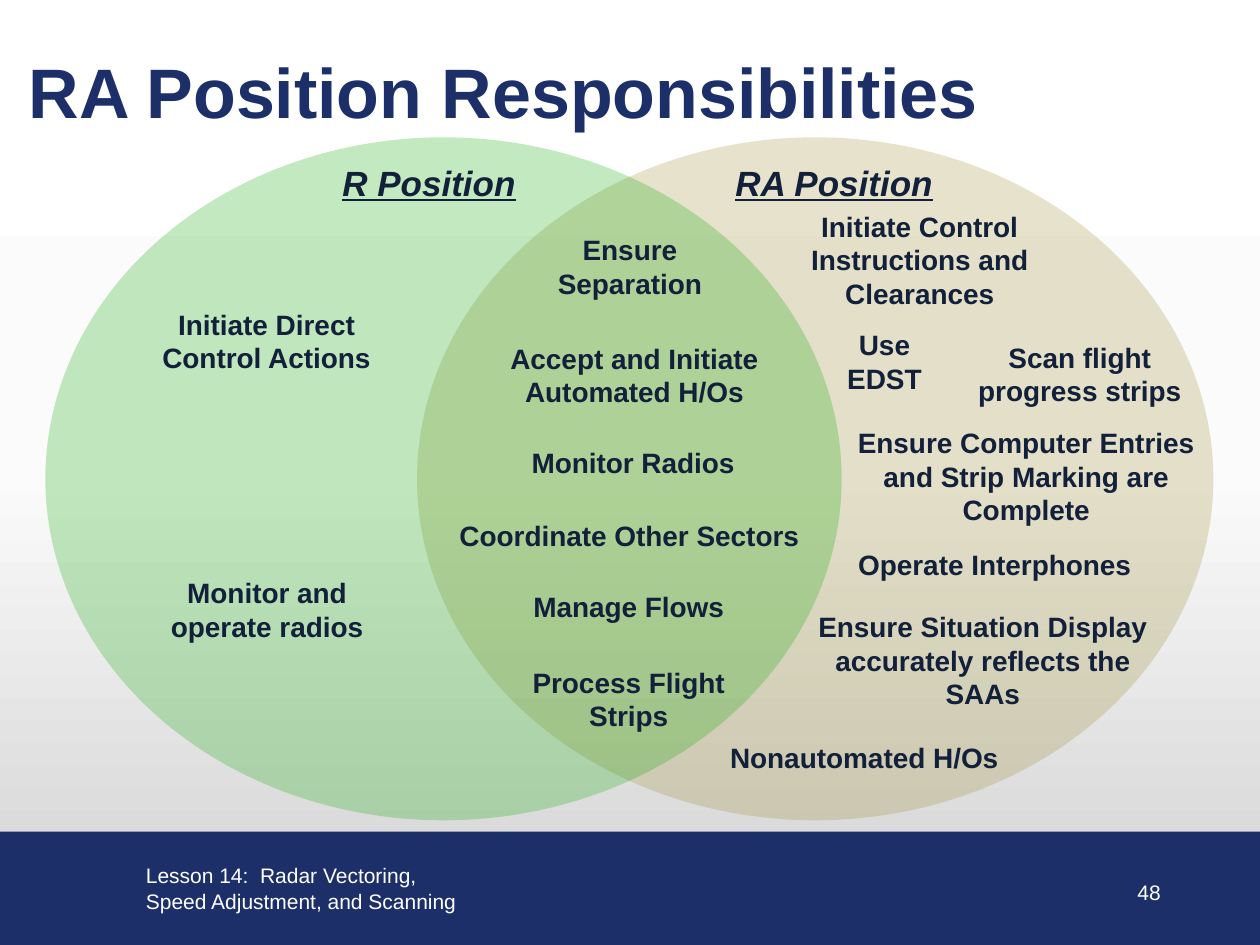
from copy import deepcopy

from pptx import Presentation
from pptx.dml.color import RGBColor
from pptx.enum import shapes, text
from pptx.oxml.ns import qn
from pptx.util import Inches, Pt

COLORS = {
    "navy": "1D2F68", "ink": "122039", "white": "FFFFFF",
    "green": "12AA06", "tan": "9C8D30",
}
BACKGROUND = [(0, "FFFFFF"), (0.5, "FBFBFB"), (1, "D0D0D0")]
LINE_HEIGHT, PADDING = 0.27, 0.1

# Left, top, width, number of lines, paragraphs
R_DUTIES = [
    (1.14, 2.39, 1.95, 2, ["Initiate Direct Control Actions"]),
    (1.08, 4.52, 2.08, 2, ["Monitor and operate radios"]),
]
SHARED_DUTIES = [
    (4.32, 1.8, 1.36, 2, ["Ensure", "Separation"]),
    (3.89, 2.66, 2.29, 2, ["Accept and Initiate", "Automated H/Os"]),
    (3.93, 3.49, 2.19, 1, ["Monitor Radios"]),
    (3.42, 4.07, 3.15, 1, ["Coordinate Other Sectors"]),
    (3.99, 4.63, 2, 1, ["Manage Flows"]),
    (4, 5.23, 1.98, 2, ["Process Flight", "Strips"]),
]
RA_DUTIES = [
    (6.12, 1.61, 2.36, 3, ["Initiate Control Instructions and Clearances"]),
    (6.55, 2.55, 0.94, 2, ["Use EDST"]),
    (7.52, 2.65, 2.1, 2, ["Scan flight progress strips"]),
    (6.68, 3.33, 2.93, 3,
     ["Ensure Computer Entries and Strip Marking are Complete"]),
    (6.68, 4.3, 2.43, 1, ["Operate Interphones"]),
    (6.36, 4.79, 2.88, 3,
     ["Ensure Situation Display accurately reflects the SAAs"]),
    (5.68, 5.83, 2.36, 1, ["Nonautomated H/Os"]),
]


def rgb(name):
    return RGBColor.from_string(COLORS[name])


def set_background(s):
    fill = s.background.fill
    fill.gradient()
    fill.gradient_angle = 270
    stops = s.element.find(".//" + qn("a:gsLst"))
    stops.append(deepcopy(stops[0]))
    for stop, (position, color) in zip(fill.gradient_stops, BACKGROUND):
        stop.position = position
        stop.color.rgb = RGBColor.from_string(color)


def style(p, size, color, align, bold=False):
    p.alignment = align
    p.font.name, p.font.size, p.font.bold = "Arial", Pt(size), bold
    p.font.color.rgb = rgb(color)


def add_panel(s, kind, box, color, opacity=100):
    sp = s.shapes.add_shape(kind, *map(Inches, box))
    sp.shadow.inherit = False
    sp.fill.solid()
    sp.fill.fore_color.rgb = rgb(color)
    sp.line.fill.background()
    if opacity < 100:
        clr = sp.fill._xPr.find(".//" + qn("a:srgbClr"))
        alpha = clr.makeelement(qn("a:alpha"), {"val": str(opacity * 1000)})
        clr.append(alpha)


def add_text(s, box, lines, size=16, color="ink",
             align=text.PP_ALIGN.CENTER, bold=True):
    tf = s.shapes.add_textbox(*map(Inches, box)).text_frame
    tf.word_wrap = True
    tf.text = "\n".join(lines)
    for p in tf.paragraphs:
        style(p, size, color, align, bold)
    return tf


def add_heading(s, left, width, label):
    font = add_text(s, (left, 1.23, width, 0.44), [label], 20).paragraphs[0].font
    font.italic = font.underline = True


def add_title(s, label):
    sp = s.shapes.title
    sp.left, sp.top, sp.width, sp.height = map(Inches, (0.13, 0.38, 9.49, 0.67))
    tf = sp.text_frame
    tf.text = label
    tf.auto_size = text.MSO_AUTO_SIZE.NONE
    tf.vertical_anchor = text.MSO_ANCHOR.MIDDLE
    style(tf.paragraphs[0], 40, "navy", text.PP_ALIGN.LEFT, True)


def add_footer(s):
    add_panel(s, shapes.MSO_SHAPE.RECTANGLE, (-0.02, 6.6, 10.02, 0.9), "navy")
    add_text(s, (1.06, 6.8, 2.79, 0.5),
             ["Lesson 14:  Radar Vectoring, Speed Adjustment, and Scanning"],
             12, "white", text.PP_ALIGN.LEFT, False)
    number = add_text(s, (8.69, 6.93, 0.62, 0.3), ["48"],
                      12, "white", text.PP_ALIGN.RIGHT, False)
    number.vertical_anchor = text.MSO_ANCHOR.MIDDLE


def main():
    prs = Presentation()
    prs.slide_width, prs.slide_height = Inches(10), Inches(7.5)
    s = prs.slides.add_slide(prs.slide_layouts[5])
    set_background(s)
    add_footer(s)
    add_title(s, "RA Position Responsibilities")

    # Overlapping circles
    for left, color in [(3.31, "tan"), (0.36, "green")]:
        add_panel(s, shapes.MSO_SHAPE.OVAL, (left, 1.09, 6.32, 5.42), color, 25)

    # Headings and duties
    add_heading(s, 2.29, 2.23, "R Position")
    add_heading(s, 5.49, 2.26, "RA Position")
    for left, top, width, rows, lines in R_DUTIES + SHARED_DUTIES + RA_DUTIES:
        add_text(s, (left, top, width, rows * LINE_HEIGHT + PADDING), lines)

    prs.save("out.pptx")


if __name__ == "__main__":
    main()
